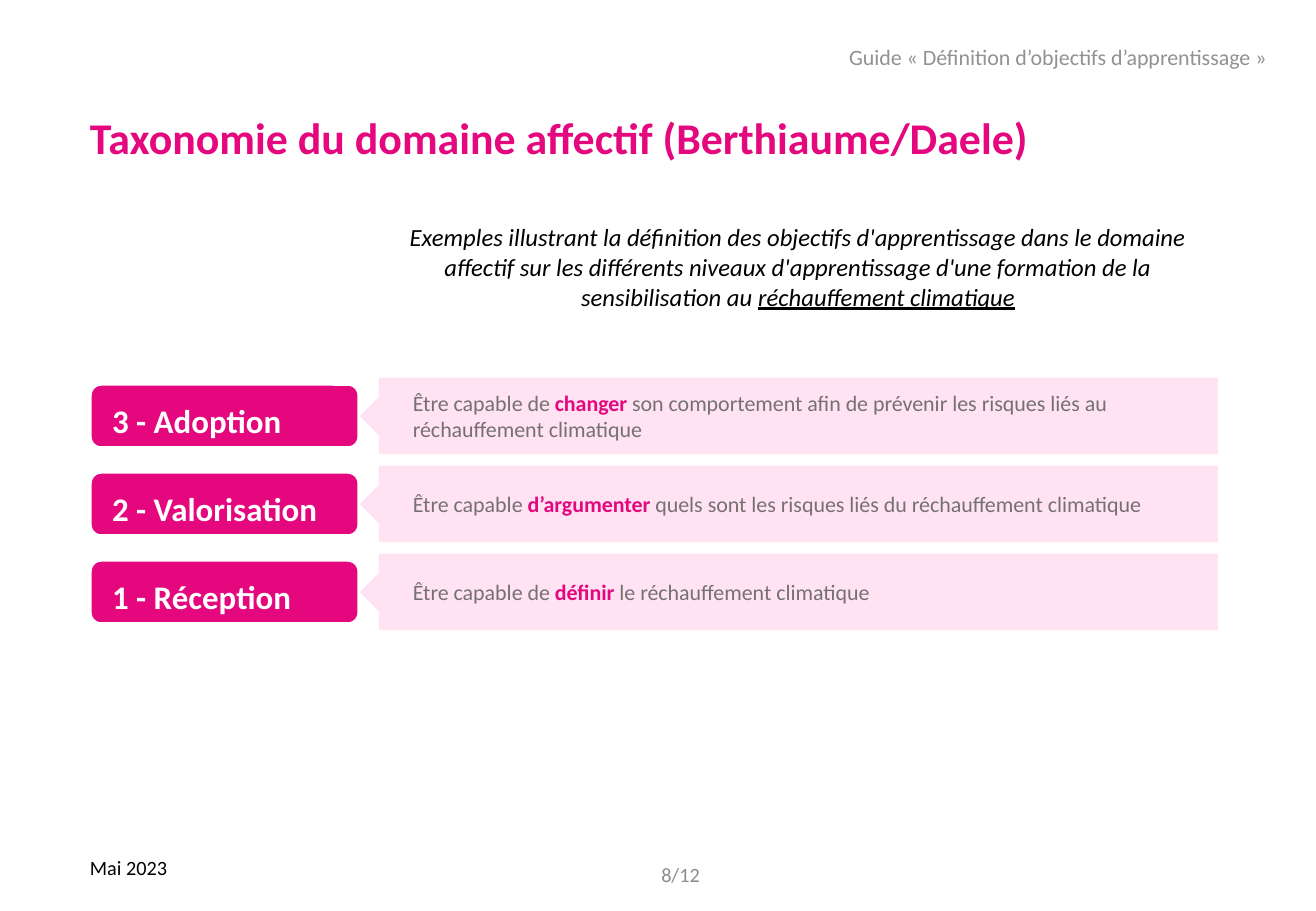
"""Builds the slide on the taxonomy of the affective domain."""
import pptx
import pptx.dml.color
import pptx.enum.shapes
import pptx.enum.text
import pptx.util
from pptx.util import Cm

SHAPE = pptx.enum.shapes.MSO_SHAPE
ALIGN = pptx.enum.text.PP_ALIGN
ANCHOR = pptx.enum.text.MSO_ANCHOR

PINK, PALE_PINK, GREY = "E4077E", "FFE3F3", "767171"
WHITE, BLACK = "FFFFFF", "000000"

FIRST_TOP, PITCH = 7.9, 1.84
BAND_HEIGHT, LABEL_HEIGHT = 1.6, 1.3
LEVELS = [
    ("3 - Adoption", "Être capable de ", "changer",
     " son comportement afin de prévenir les risques liés au réchauffement climatique"),
    ("2 - Valorisation", "Être capable ", "d’argumenter ",
     "quels sont les risques liés du réchauffement climatique"),
    ("1 - Réception", "Être capable de ", "définir", " le réchauffement climatique"),
]


def colour(hex_code):
    """Return the colour for a hex string."""
    return pptx.dml.color.RGBColor.from_string(hex_code)


def write(owner, runs, size, insets=(0.25, 0.13, 0.25, 0.13), align=ALIGN.LEFT,
          anchor=ANCHOR.MIDDLE, spacing=1.0):
    """Fill one paragraph with runs of (text, colour, styles)."""
    frame = owner.text_frame
    frame.word_wrap = True
    frame.vertical_anchor = anchor
    (frame.margin_left, frame.margin_top,
     frame.margin_right, frame.margin_bottom) = map(Cm, insets)
    paragraph = frame.paragraphs[0]
    paragraph.alignment = align
    paragraph.line_spacing = spacing
    for text, hex_code, styles in runs:
        run = paragraph.add_run()
        run.text = text
        run.font.name = "Calibri"
        run.font.size = pptx.util.Pt(size)
        run.font.color.rgb = colour(hex_code)
        run.font.bold = "b" in styles
        run.font.italic = "i" in styles
        run.font.underline = "u" in styles


def add_text(slide, box, runs, size, **layout):
    """Add a text box at (left, top, width, height)."""
    write(slide.shapes.add_textbox(*map(Cm, box)), runs, size, **layout)


def add_block(slide, preset, box, fill, outlined=True):
    """Add a filled shape, with a thin white outline if wanted."""
    block = slide.shapes.add_shape(preset, *map(Cm, box))
    block.shadow.inherit = False
    block.fill.solid()
    block.fill.fore_color.rgb = colour(fill)
    if outlined:
        block.line.color.rgb = colour(WHITE)
        block.line.width = pptx.util.Pt(1)
    else:
        block.line.fill.background()
    return block


def add_level(slide, top, label, opening, verb, ending):
    """Add one level: its label and the example pointing to it."""
    pointer = add_block(slide, SHAPE.PENTAGON, (7.49, top, 17.98, BAND_HEIGHT), PALE_PINK)
    pointer.rotation = 180
    example = add_block(slide, SHAPE.RECTANGLE, (7.92, top, 17.53, BAND_HEIGHT),
                        PALE_PINK, outlined=False)
    write(example, [(opening, GREY, ""), (verb, PINK, "b"), (ending, GREY, "")], 13,
          insets=(0.71, 0.28, 0.51, 0.28))
    label_top = top + (BAND_HEIGHT - LABEL_HEIGHT) / 2
    level = add_block(slide, SHAPE.ROUNDED_RECTANGLE,
                      (1.9, label_top, 5.59, LABEL_HEIGHT), PINK)
    write(level, [(label, WHITE, "b")], 19.5, insets=(0.38, 0.18, 0.38, 0.18), spacing=1.2)


def main():
    """Build and save the slide."""
    deck = pptx.Presentation()
    deck.slide_width, deck.slide_height = Cm(27.51), Cm(19.05)
    slide = deck.slides.add_slide(deck.slide_layouts[6])

    add_text(slide, (17.5, 0.38, 9.8, 1.7),
             [("Guide «\u00a0Définition d’objectifs d’apprentissage\u00a0»", "929293", "")],
             13, spacing=0.9)
    add_text(slide, (1.63, 2.08, 25.2, 1.7),
             [("Taxonomie du domaine affectif (Berthiaume/Daele)", PINK, "b")],
             26, spacing=0.9)
    add_text(slide, (7.92, 4.52, 17.53, 2.13),
             [("Exemples illustrant la définition des objectifs d'apprentissage dans le "
               "domaine affectif sur les différents niveaux d'apprentissage d'une formation "
               "de la sensibilisation au ", BLACK, "i"),
              ("réchauffement climatique", BLACK, "iu")],
             14.6, align=ALIGN.CENTER, anchor=ANCHOR.TOP)
    for row, level in enumerate(LEVELS):
        add_level(slide, FIRST_TOP + row * PITCH, *level)
    add_text(slide, (1.63, 17.75, 3, 0.76), [("Mai 2023", BLACK, "")], 12,
             anchor=ANCHOR.TOP)
    add_text(slide, (12.88, 17.78, 2, 1.02), [("8/12", "8C8C8C", "")], 12,
             align=ALIGN.RIGHT)
    deck.save("out.pptx")


if __name__ == "__main__":
    main()
